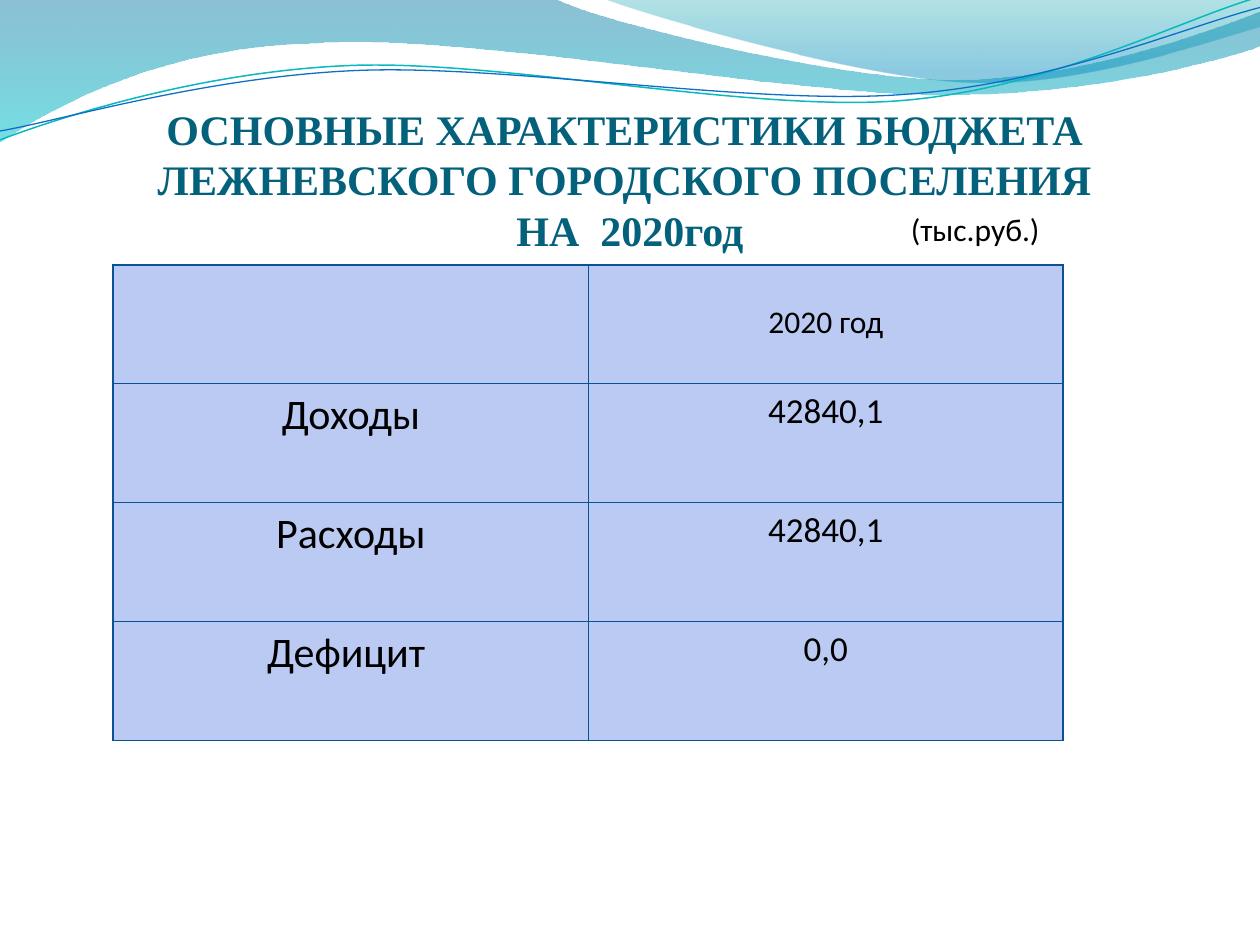
import math

import pptx
import pptx.util
import pptx.dml.color
import pptx.enum.text
import pptx.oxml
import pptx.oxml.ns
import lxml.etree

Inches = pptx.util.Inches
Pt = pptx.util.Pt
RGBColor = pptx.dml.color.RGBColor
ALIGN = pptx.enum.text.PP_ALIGN
ANCHOR = pptx.enum.text.MSO_ANCHOR
AUTO_SIZE = pptx.enum.text.MSO_AUTO_SIZE
qn = pptx.oxml.ns.qn

BLACK = RGBColor(0x00, 0x00, 0x00)
TITLE_BLUE = RGBColor(0x04, 0x61, 0x7B)
CELL_FILL = RGBColor(0xBB, 0xCA, 0xF3)
BORDER = RGBColor(0x09, 0x52, 0x95)
LINE_TEAL = RGBColor(0x0A, 0xB8, 0xBF)
LINE_BLUE = RGBColor(0x0F, 0x6F, 0xC6)
DEEP_BLUE = RGBColor(0x00, 0x74, 0xA1)
CYAN = RGBColor(0x00, 0xC6, 0xCF)
TEAL = RGBColor(0x00, 0xA1, 0xA9)
SKY_BLUE = RGBColor(0x00, 0x8B, 0xBF)

STRAND_TILT = 357.3

WAVES = [
    {
        "outline": [(0, 0), (4.4, -0.01),
                    (4.76, 0.17, 6.64, 0.63, 7.58, 0.63),
                    (8.53, 0.63, 9.58, 0.26, 10, 0.09), (10.01, 0.36),
                    (9.83, 0.44, 8.7, 0.76, 7.46, 0.75),
                    (6.22, 0.75, 3.82, 0.28, 2.57, 0.34),
                    (1.29, 0.36, 0.46, 0.83, -0.01, 1.13), (0, 0)],
        "stops": [(0, DEEP_BLUE, 45), (1, CYAN, 55)],
    },
    {
        "outline": [(4.79, -0.01),
                    (5.09, 0.11, 6.82, 0.62, 7.69, 0.65),
                    (8.56, 0.69, 9.61, 0.32, 10, 0.21), (10, 0),
                    (4.79, -0.01)],
        "stops": [(0, TEAL, 30), (0.8, SKY_BLUE, 45)],
    },
]

STRANDS = [
    ([(0, 1.11), (0.48, 0.93, 1.58, 0.57, 2.77, 0.52),
      (3.95, 0.47, 5.93, 0.89, 7.13, 0.8),
      (8.33, 0.71, 9.38, 0.15, 9.98, -0.02)],
     (4.99, 0.58), LINE_TEAL, 0.85),
    ([(0, 1.04), (0.47, 0.96, 1.64, 0.61, 2.83, 0.56),
      (4.03, 0.51, 5.97, 0.84, 7.17, 0.75),
      (8.36, 0.67, 9.41, 0.21, 10, 0.06)],
     (5, 0.59), LINE_BLUE, 0.75),
]

TITLE = ("ОСНОВНЫЕ ХАРАКТЕРИСТИКИ БЮДЖЕТА \v"
         "ЛЕЖНЕВСКОГО ГОРОДСКОГО ПОСЕЛЕНИЯ \v"
         "НА  2020год")

BUDGET = [
    ("", "2020 год"),
    ("Доходы", "42840,1"),
    ("Расходы", "42840,1"),
    ("Дефицит ", "0,0"),
]


def segment_points(segment):
    return list(zip(segment[::2], segment[1::2]))


def level_segment(segment, center):
    angle = math.radians(360 - STRAND_TILT)
    cosine, sine = math.cos(angle), math.sin(angle)
    level = []
    for x, y in segment_points(segment):
        across, down = x - center[0], y - center[1]
        level += [center[0] + across * cosine - down * sine,
                  center[1] + across * sine + down * cosine]
    return level


def add_curve(page, outline):
    points = [(Inches(x), Inches(y))
              for segment in outline for x, y in segment_points(segment)]
    builder = page.shapes.build_freeform(*points[0])
    builder.add_line_segments(points[1:], close=False)
    shape = builder.convert_to_shape()
    shape.shadow.inherit = False
    lines = iter(list(shape._element.iter(qn("a:lnTo"))))
    for segment in outline[1:]:
        line = next(lines)
        if len(segment) == 6:
            curve = lxml.etree.Element(qn("a:cubicBezTo"))
            line.addprevious(curve)
            for part in (line, next(lines), next(lines)):
                curve.append(part[0])
                part.getparent().remove(part)
    return shape


def add_wave(page, outline, stops):
    shape = add_curve(page, outline)
    shape.line.fill.background()
    shape.fill.gradient()
    shape.fill.gradient_angle = 270
    for stop, (position, color, _) in zip(shape.fill.gradient_stops, stops):
        stop.position = position
        stop.color.rgb = color
    colors = shape._element.spPr.iter(qn("a:srgbClr"))
    for color, (_, _, opacity) in zip(colors, stops):
        lxml.etree.SubElement(color, qn("a:alpha"), val=str(opacity * 1000))


def add_strand(page, outline, center, color, width):
    level = [level_segment(segment, center) for segment in outline]
    shape = add_curve(page, level)
    shape.rotation = STRAND_TILT
    shape.fill.background()
    shape.line.color.rgb = color
    shape.line.width = Pt(width)


def write_text(frame, text, color, align, font_format):
    para = frame.paragraphs[0]
    para.text = text
    para.alignment = align
    for span in para.runs:
        for name, value in font_format.items():
            setattr(span.font, name, value)
        span.font.color.rgb = color
    return para


def add_text(page, place, text, color, align, font_format, frame_format):
    box = page.shapes.add_textbox(*map(Inches, place))
    for name, value in frame_format.items():
        setattr(box.text_frame, name, value)
    return write_text(box.text_frame, text, color, align, font_format)


def set_borders(cell, heavy_sides):
    properties = cell._tc.get_or_add_tcPr()
    for index, side in enumerate("LRTB"):
        width = Pt(1.25 if side in heavy_sides else 0.75)
        line = lxml.etree.Element(qn("a:ln" + side), w=str(width))
        fill = lxml.etree.SubElement(line, qn("a:solidFill"))
        lxml.etree.SubElement(fill, qn("a:srgbClr"), val=str(BORDER))
        properties.insert(index, line)


def add_budget_table(page):
    place = map(Inches, (0.9, 2.1, 7.54, 3.78))
    table = page.shapes.add_table(len(BUDGET), 2, *place).table
    for row_index, row in enumerate(BUDGET):
        for column_index, text in enumerate(row):
            cell = table.cell(row_index, column_index)
            cell.fill.solid()
            cell.fill.fore_color.rgb = CELL_FILL
            header = row_index == 0
            set_borders(cell, "LR"[column_index] + ("T" if header else ""))
            if header:
                cell.vertical_anchor = ANCHOR.MIDDLE
                cell.margin_bottom = Inches(0.08)
            size = 18 if header else (24, 20)[column_index]
            write_text(cell.text_frame, text, BLACK, ALIGN.CENTER,
                       {"name": "Calibri", "size": Pt(size), "bold": False})


def main():
    deck = pptx.Presentation()
    deck.slide_width, deck.slide_height = Inches(10), Inches(7.5)
    page = deck.slides.add_slide(deck.slide_layouts[6])
    for wave in WAVES:
        add_wave(page, **wave)
    for strand in STRANDS:
        add_strand(page, *strand)
    title = add_text(
        page, (0.5, 0.77, 9, 1.25), TITLE, TITLE_BLUE, ALIGN.CENTER,
        {"name": "Times New Roman", "size": Pt(24), "bold": True},
        {"word_wrap": True, "vertical_anchor": ANCHOR.BOTTOM,
         "margin_left": 0, "margin_right": 0, "margin_bottom": 0})
    title.line_spacing = Pt(28.8)
    add_budget_table(page)
    add_text(page, (7.13, 1.62, 1.81, 0.4), "(тыс.руб.)", BLACK, ALIGN.LEFT,
             {"name": "Calibri", "size": Pt(18)},
             {"word_wrap": True, "auto_size": AUTO_SIZE.SHAPE_TO_FIT_TEXT})
    deck.save("out.pptx")


if __name__ == "__main__":
    main()
